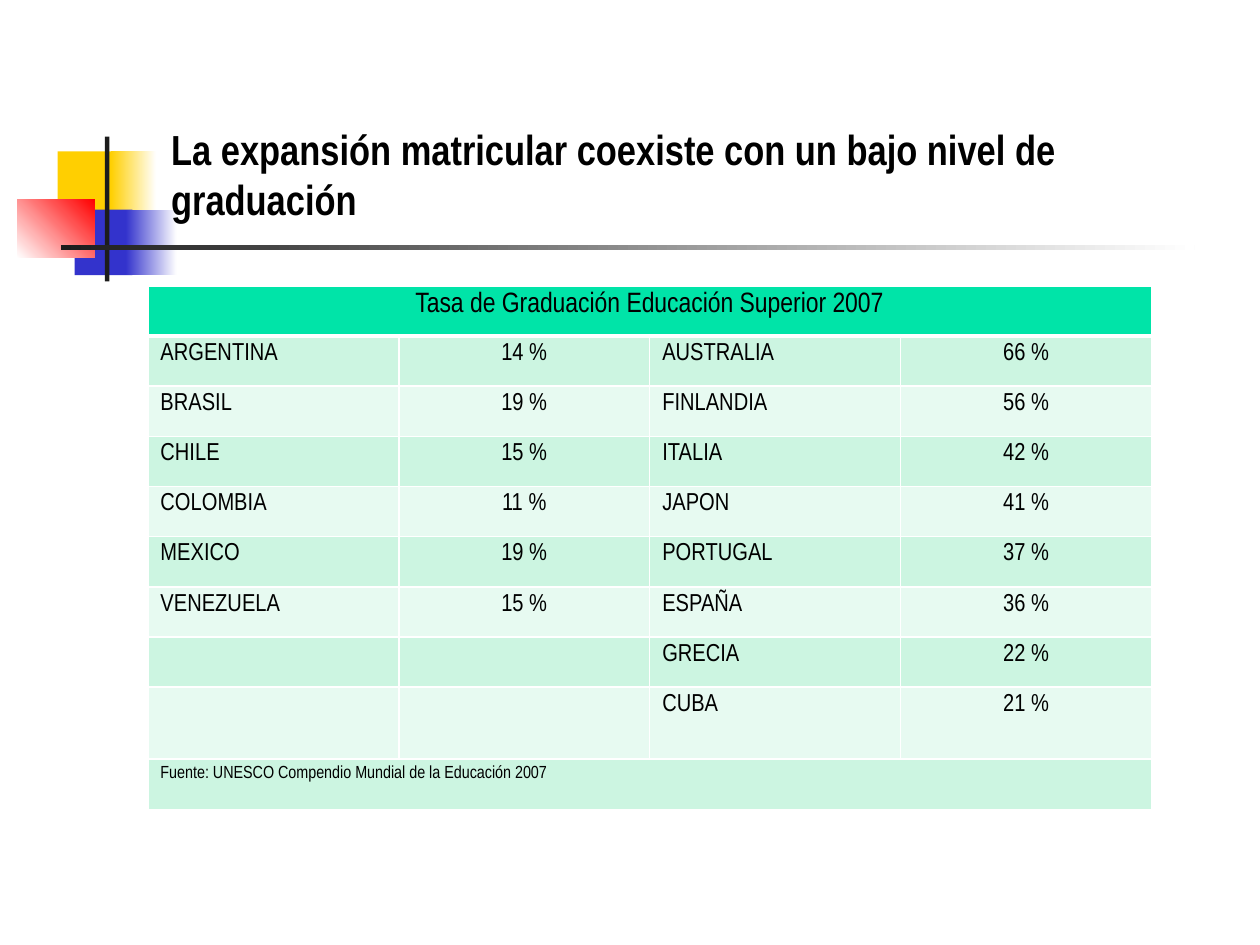
from dataclasses import dataclass

from lxml.etree import SubElement
from pptx import Presentation
from pptx.dml.color import RGBColor
from pptx.enum.shapes import MSO_SHAPE
from pptx.enum.text import MSO_ANCHOR, PP_ALIGN
from pptx.oxml.ns import qn
from pptx.util import Pt


@dataclass(frozen=True)
class Theme:
    font: str = "Arial Narrow"
    text: str = "000000"
    white: str = "FFFFFF"
    yellow: str = "FFCF01"
    blue: str = "3333CC"
    red: str = "FF0000"
    rule: str = "1C1C1C"
    header: str = "00E4A8"
    bands: tuple = ("CCF5E1", "E7FAF1")
    title_size: int = 24
    header_size: int = 16
    body_size: int = 14
    source_size: int = 10


THEME = Theme()

# left, top, width, height, colours (two make a gradient), angle
ORNAMENTS = [
    (33, 86.5, 34.8, 37.5, (THEME.yellow,), 0),
    (63.3, 86.5, 26, 37.5, (THEME.yellow, THEME.white), 0),
    (42.7, 119.8, 33, 37.5, (THEME.blue,), 0),
    (72, 119.8, 29, 37.5, (THEME.blue, THEME.white), 0),
    (9.8, 113.8, 44.3, 33.4, (THEME.white, THEME.red), 45),
    (60, 78, 2.5, 82.8, (THEME.rule,), 0),
    (34.7, 140.2, 648, 2.5, (THEME.rule, THEME.white), 0),
]

TITLE = "La expansión matricular coexiste con un bajo nivel de graduación"
TABLE_TITLE = "Tasa de Graduación Educación Superior 2007"
SOURCE = "Fuente: UNESCO Compendio Mundial de la Educación 2007"
RATES = [
    ("ARGENTINA", "14 %", "AUSTRALIA", "66 %"),
    ("BRASIL", "19 %", "FINLANDIA", "56 %"),
    ("CHILE", "15 %", "ITALIA", "42 %"),
    ("COLOMBIA", "11 %", "JAPON", "41 %"),
    ("MEXICO", "19 %", "PORTUGAL", "37 %"),
    ("VENEZUELA", "15 %", "ESPAÑA", "36 %"),
    ("", "", "GRECIA", "22 %"),
    ("", "", "CUBA", "21 %"),
]
ROW_HEIGHT, LAST_RATE_HEIGHT = 28.67, 41.2
COLUMN_WIDTH = 143.4


def add_block(slide, left, top, width, height, colours, angle):
    s = slide.shapes.add_shape(MSO_SHAPE.RECTANGLE, Pt(left), Pt(top), Pt(width), Pt(height))
    s.shadow.inherit = False
    s.line.fill.background()
    if len(colours) == 1:
        s.fill.solid()
        s.fill.fore_color.rgb = RGBColor.from_string(colours[0])
        return
    s.fill.gradient()
    s.fill.gradient_angle = angle
    for stop, colour in zip(s.fill.gradient_stops, colours):
        stop.color.rgb = RGBColor.from_string(colour)


def write(tf, text, size, align=PP_ALIGN.LEFT, bold=False):
    p = tf.paragraphs[0]
    p.alignment = align
    r = p.add_run()
    r.text = text
    formats = {"name": THEME.font, "size": Pt(size), "bold": bold}
    for name, value in formats.items():
        setattr(r.font, name, value)
    r.font.color.rgb = RGBColor.from_string(THEME.text)


def add_title(slide):
    tf = slide.shapes.add_textbox(Pt(90.7), Pt(62), Pt(613.4), Pt(69.8)).text_frame
    for name, value in {"word_wrap": True, "vertical_anchor": MSO_ANCHOR.BOTTOM}.items():
        setattr(tf, name, value)
    write(tf, TITLE, THEME.title_size, bold=True)


def set_borders(cell, **widths):
    """Draw white borders, 1 pt unless a side (L, R, T, B) has its own width."""
    tc_pr = cell._tc.get_or_add_tcPr()
    for side in "LRTB":
        ln = SubElement(tc_pr, qn(f"a:ln{side}"), w=str(Pt(widths.get(side, 1))))
        fill = SubElement(ln, qn("a:solidFill"))
        SubElement(fill, qn("a:srgbClr"), val=THEME.white)


def fill_cell(cell, colour):
    cell.fill.solid()
    cell.fill.fore_color.rgb = RGBColor.from_string(colour)
    cell.margin_bottom = 0


def add_rate_table(slide):
    n_rows, n_cols = len(RATES) + 2, len(RATES[0])
    table = slide.shapes.add_table(
        n_rows, n_cols, Pt(84.5), Pt(163.4), Pt(COLUMN_WIDTH * n_cols), Pt(ROW_HEIGHT * n_rows)
    ).table
    table.first_row = table.horz_banding = False
    for column in table.columns:
        column.width = Pt(COLUMN_WIDTH)
    for i, row in enumerate(table.rows):
        row.height = Pt(LAST_RATE_HEIGHT if i == len(RATES) else ROW_HEIGHT)
        widths = {0: {"B": 3}, 1: {"T": 3}}.get(i, {})
        for cell in row.cells:
            set_borders(cell, **widths)
            fill_cell(cell, THEME.bands[(i - 1) % 2] if i else THEME.header)

    for i in (0, n_rows - 1):
        table.cell(i, 0).merge(table.cell(i, n_cols - 1))
    write(table.cell(0, 0).text_frame, TABLE_TITLE, THEME.header_size, PP_ALIGN.CENTER)
    write(table.cell(n_rows - 1, 0).text_frame, SOURCE, THEME.source_size)
    for i, values in enumerate(RATES, start=1):
        for j, value in enumerate(values):
            if value:
                align = PP_ALIGN.CENTER if j % 2 else PP_ALIGN.LEFT
                write(table.cell(i, j).text_frame, value, THEME.body_size, align)


def main():
    prs = Presentation()
    prs.slide_width, prs.slide_height = Pt(720), Pt(540)
    slide = prs.slides.add_slide(prs.slide_layouts[6])
    for ornament in ORNAMENTS:
        add_block(slide, *ornament)
    add_title(slide)
    add_rate_table(slide)
    prs.save("out.pptx")


if __name__ == "__main__":
    main()
